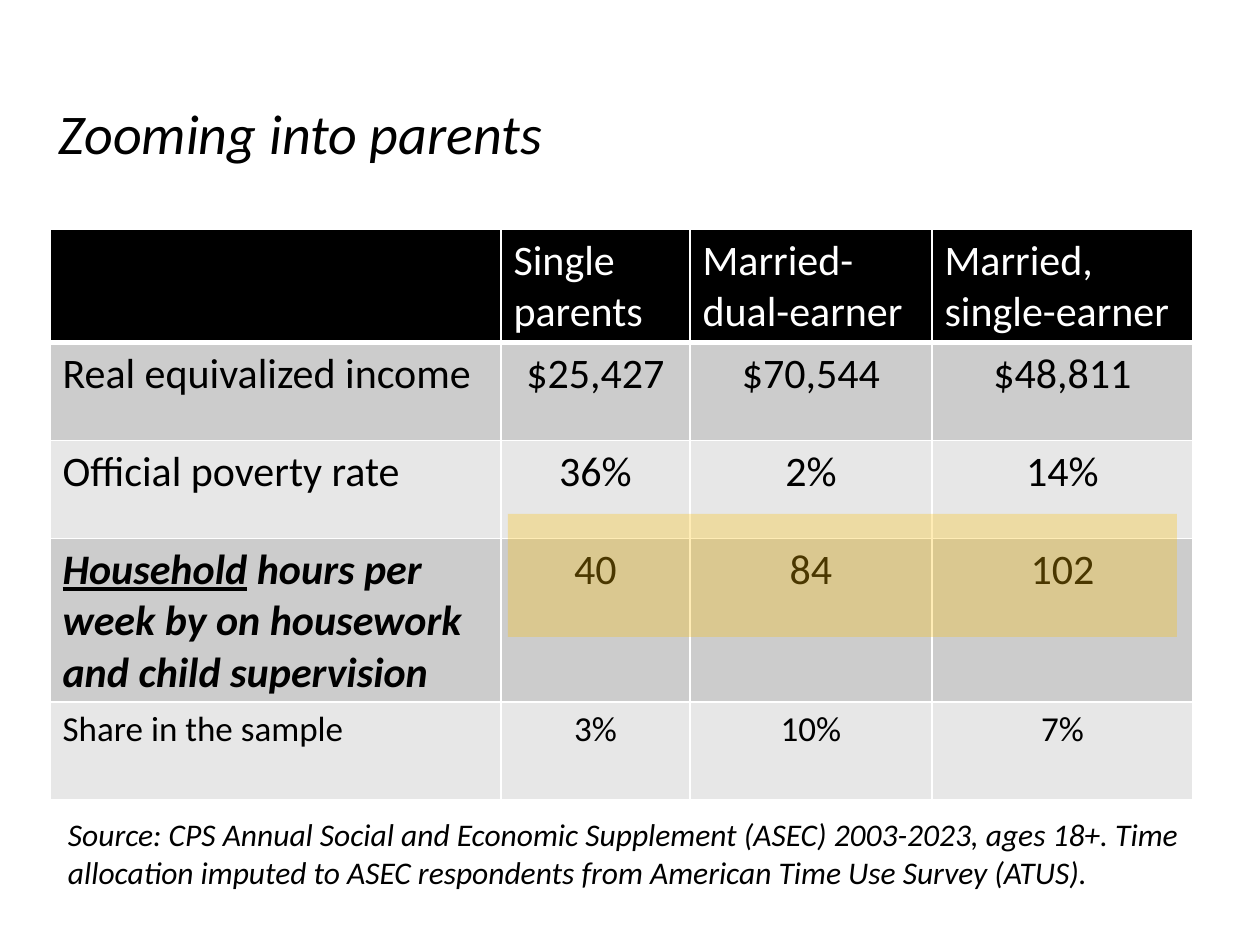
import pptx
import pptx.util
import pptx.dml.color
import pptx.enum.shapes
import pptx.enum.text
import pptx.oxml
import pptx.oxml.ns

SCALE = 914400 / 126
FONT = "Calibri"
HUES = {
    "ink": "000000",
    "paper": "FFFFFF",
    "dark": "CCCCCC",
    "light": "E7E7E7",
    "gold": "FFC000",
}
COLS = [451, 189, 242, 261]
ROWS = [60, 98, 98, 129, 98]
CELLS = [
    ["", "Single parents", "Married-dual-earner", "Married, single-earner"],
    ["Real equivalized income", "$25,427", "$70,544", "$48,811"],
    ["Official poverty rate", "36%", "2%", "14%"],
    ["Household| hours per week by on housework and child supervision",
     "40", "84", "102"],
    ["Share in the sample", "3%", "10%", "7%"],
]
SOURCE = ("Source: CPS Annual Social and Economic Supplement (ASEC) 2003-2023, "
          "ages 18+. Time allocation imputed to ASEC respondents from "
          "American Time Use Survey (ATUS).")


def px(count):
    return pptx.util.Emu(round(count * SCALE))


def hue(name):
    return pptx.dml.color.RGBColor.from_string(HUES[name])


def style(para, size, color="ink", bold=False, italic=False):
    font = para.font
    font.name = FONT
    font.size = pptx.util.Pt(size)
    font.bold = bold
    font.italic = italic
    font.color.rgb = hue(color)


def add_text(slide, box, text, size):
    frame = slide.shapes.add_textbox(*map(px, box)).text_frame
    frame.word_wrap = True
    frame.margin_left = frame.margin_right = 0
    frame.margin_top = frame.margin_bottom = 0
    para = frame.paragraphs[0]
    para.text = text
    style(para, size, italic=True)


def add_edges(cell, row):
    props = cell._tc.get_or_add_tcPr()
    wide = {0: "B", 1: "T"}.get(row)
    for spot, side in enumerate("LRTB"):
        width = pptx.util.Pt(3 if side == wide else 1)
        edge = pptx.oxml.parse_xml(
            f'<a:ln{side} {pptx.oxml.ns.nsdecls("a")} w="{width}"><a:solidFill>'
            f'<a:srgbClr val="{HUES["paper"]}"/></a:solidFill></a:ln{side}>')
        props.insert(spot, edge)


def fill_cell(cell, row, col, text):
    head = row == 0
    strong = "|" in text
    cell.fill.solid()
    cell.fill.fore_color.rgb = hue("ink" if head else "dark" if row % 2 else "light")
    add_edges(cell, row)
    para = cell.text_frame.paragraphs[0]
    for part in text.split("|"):
        para.add_run().text = part
    if strong:
        para.runs[0].font.underline = True
    if not head and col:
        para.alignment = pptx.enum.text.PP_ALIGN.CENTER
    style(para, 20 if row == len(ROWS) - 1 else 24,
          "paper" if head else "ink", strong, strong)


def add_grid(slide, left, top):
    table = slide.shapes.add_table(
        len(ROWS), len(COLS), px(left), px(top), px(sum(COLS)), px(sum(ROWS))).table
    for col, width in enumerate(COLS):
        table.columns[col].width = px(width)
    for row, height in enumerate(ROWS):
        table.rows[row].height = px(height)
        for col, text in enumerate(CELLS[row]):
            fill_cell(table.cell(row, col), row, col, text)


def add_glow(slide, box, alpha):
    shape = slide.shapes.add_shape(
        pptx.enum.shapes.MSO_SHAPE.RECTANGLE, *map(px, box))
    shape.shadow.inherit = False
    shape.line.fill.background()
    shape.fill.solid()
    shape.fill.fore_color.rgb = hue("gold")
    color = shape._element.spPr.find(".//" + pptx.oxml.ns.qn("a:srgbClr"))
    color.append(pptx.oxml.parse_xml(
        f'<a:alpha {pptx.oxml.ns.nsdecls("a")} val="{alpha * 1000}"/>'))


def main():
    deck = pptx.Presentation()
    deck.slide_width = px(1260)
    deck.slide_height = px(945)
    slide = deck.slides.add_slide(deck.slide_layouts[6])
    add_text(slide, (59, 98, 838, 69), "Zooming into parents", 32)
    add_grid(slide, 50, 229)
    add_text(slide, (68, 815, 1124, 87), SOURCE, 18)
    add_glow(slide, (508, 514, 669, 123), 29)
    deck.save("out.pptx")


if __name__ == "__main__":
    main()
